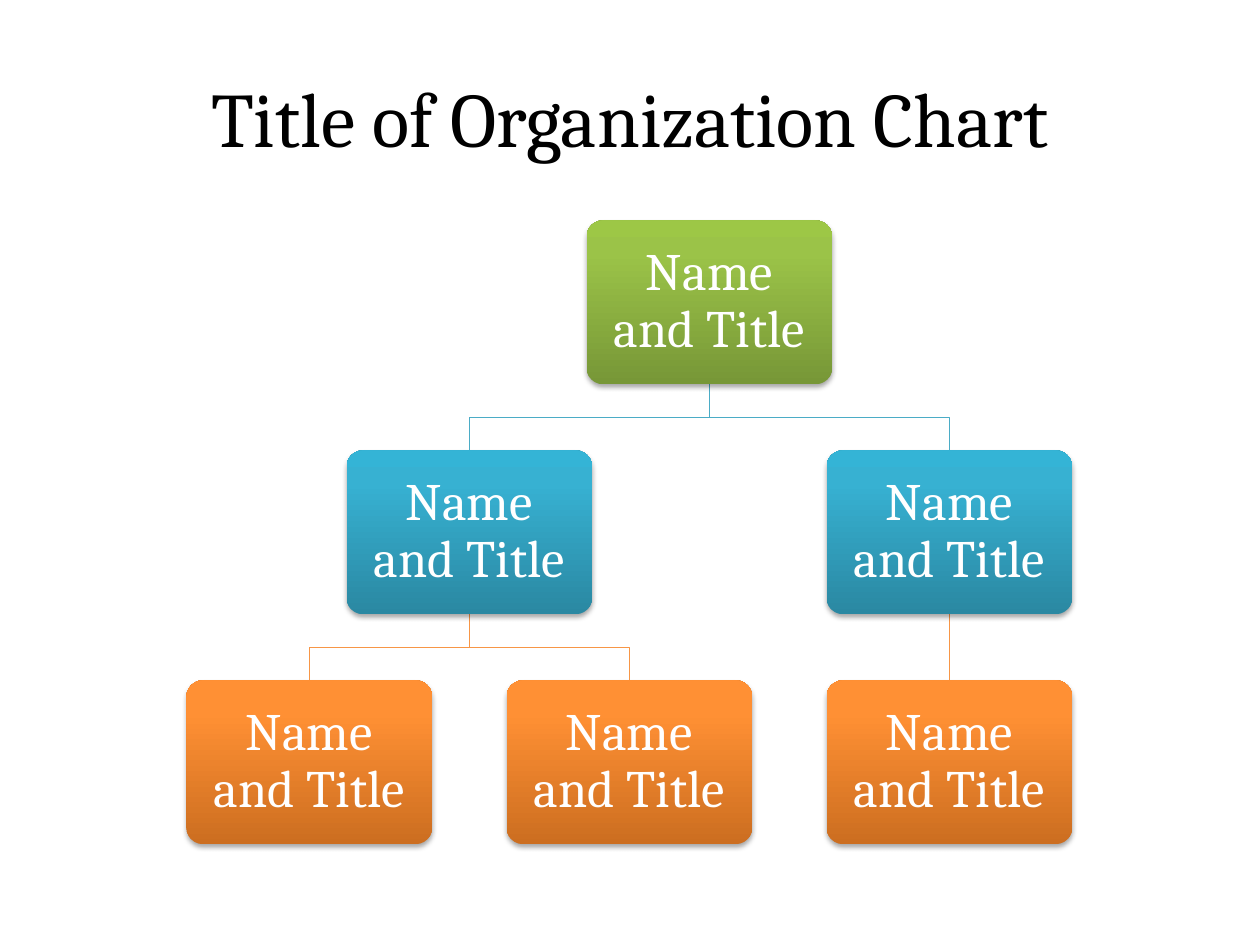
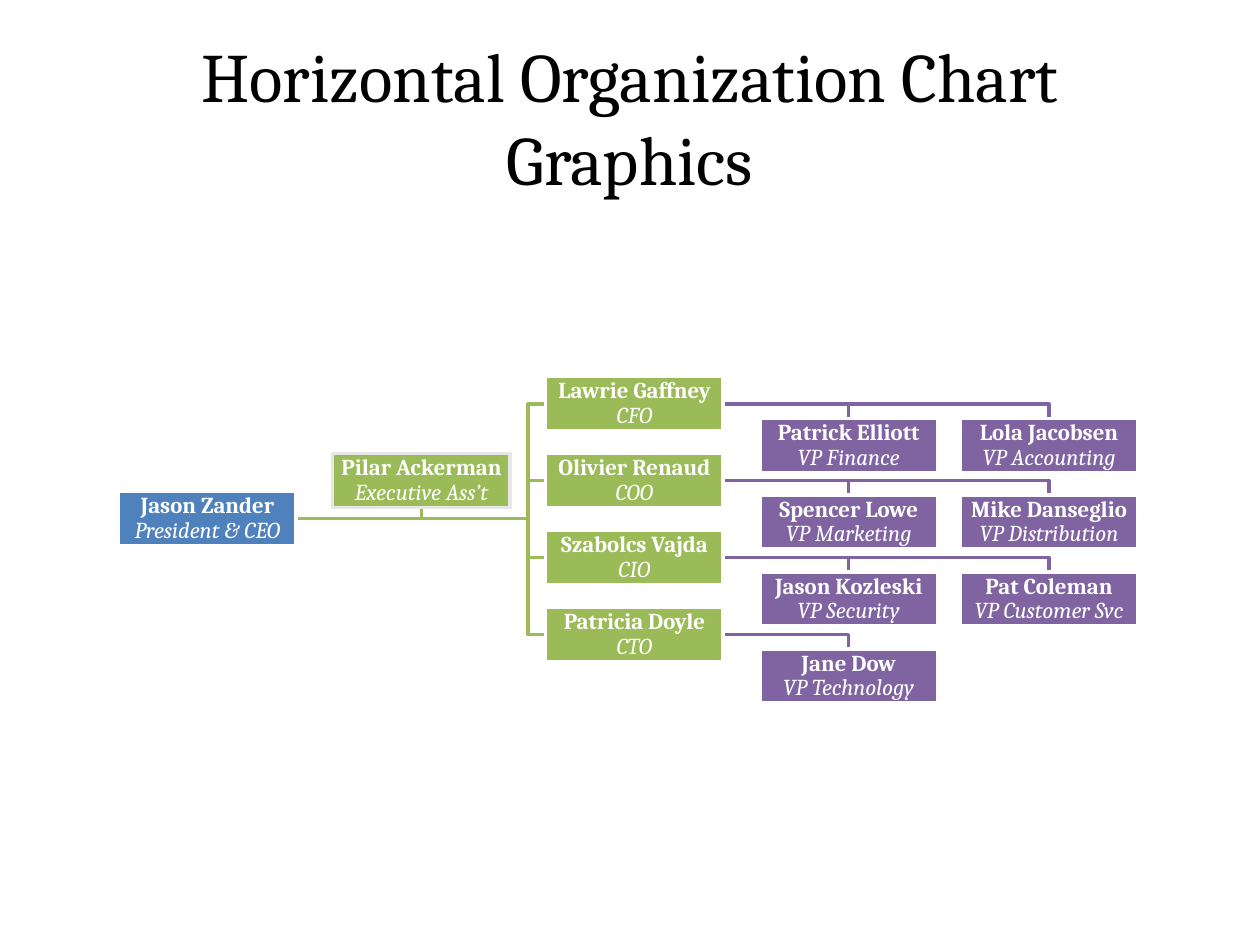
from lxml import etree
from pptx import Presentation
from pptx.dml.color import RGBColor
from pptx.enum.shapes import MSO_CONNECTOR, MSO_SHAPE
from pptx.enum.text import MSO_ANCHOR, PP_ALIGN
from pptx.oxml.ns import qn
from pptx.util import Inches, Pt

FONT = "Cambria"
COLOURS = {
    "black": "000000", "white": "FFFFFF", "frame": "E7E7E7",
    "blue": "4F81BD", "green": "9BBB59", "purple": "8064A2",
    "teal": "4BACC6", "orange": "F79646",
}
LEVELS = [
    {"gradient": [(0, "779737"), (80, "9BC348"), (100, "9DC746")], "link": None},
    {"gradient": [(0, "2A88A2"), (80, "37B1D2"), (100, "34B4D6")], "link": "teal"},
    {"gradient": [(0, "CC6E20"), (80, "FF9034"), (100, "FF9136")], "link": "orange"},
]

TREE_TITLE = "Title of Organization Chart"
ROLE = "Name and Title"
TREE = (ROLE, [
    (ROLE, [(ROLE, []), (ROLE, [])]),
    (ROLE, [(ROLE, [])]),
])

STAFF_TITLE = "Horizontal Organization Chart Graphics"
PRESIDENT = ("Jason Zander", "President & CEO")
ASSISTANT = ("Pilar Ackerman", "Executive Ass’t")
CHIEFS = [
    (("Lawrie Gaffney", "CFO"),
     [("Patrick Elliott", "VP Finance"), ("Lola Jacobsen", "VP Accounting")]),
    (("Olivier Renaud", "COO"),
     [("Spencer Lowe", "VP Marketing"), ("Mike Danseglio", "VP Distribution")]),
    (("Szabolcs Vajda", "CIO"),
     [("Jason Kozleski", "VP Security"), ("Pat Coleman", "VP Customer Svc")]),
    (("Patricia Doyle", "CTO"),
     [("Jane Dow", "VP Technology")]),
]

CARD_W, CARD_H = 1.95, 1.3
TREE_LEFT, TREE_TOP = 1.48, 1.75
TREE_COLUMN, TREE_ROW = 2.54, (5.4 - 1.75) / 2

STAFF_W, STAFF_H = 1.41, 0.43
PRESIDENT_AT = (0.94, 3.9)
ASSISTANT_AT = (2.64, 3.6)
CHIEF_LEFT, CHIEF_TOP, CHIEF_ROW = 4.33, 2.99, 0.61
VP_LEFT, VP_COLUMN, VP_DROP = 6.03, 1.59, 0.33
TRUNK_X = 4.19


def rgb(name):
    return RGBColor.from_string(COLOURS[name])


def write(box, lines, size, colour="white", spacing=0.9, inset=0.01, styles=()):
    frame = box.text_frame
    frame.word_wrap = True
    frame.vertical_anchor = MSO_ANCHOR.MIDDLE
    frame.margin_left = frame.margin_right = Inches(inset)
    frame.margin_top = frame.margin_bottom = Inches(inset)
    paragraph = frame.paragraphs[0]
    paragraph.alignment = PP_ALIGN.CENTER
    paragraph.line_spacing = spacing
    for number, line in enumerate(lines):
        if number:
            paragraph.add_line_break()
        run = paragraph.add_run()
        run.text = line
        run.font.name, run.font.size = FONT, Pt(size)
        run.font.color.rgb = rgb(colour)
        style = styles[number] if styles else None
        run.font.bold = style == "bold"
        run.font.italic = style == "italic"


def add_title(slide, text, size):
    box = slide.shapes.add_textbox(Inches(0.5), Inches(0.3), Inches(9), Inches(1.25))
    write(box, [text], size, colour="black", spacing=1.0, inset=0.1)


def add_link(slide, points, colour, width):
    points = [(Inches(x), Inches(y)) for x, y in points]
    if len({x for x, _ in points}) == 1:
        link = slide.shapes.add_connector(
            MSO_CONNECTOR.STRAIGHT, *points[0], *points[-1])
        etree.SubElement(link._element.spPr, qn("a:effectLst"))
    else:
        builder = slide.shapes.build_freeform(*points[0], scale=1.0)
        builder.add_line_segments(points[1:], close=False)
        link = builder.convert_to_shape()
        link.fill.background()
        link.shadow.inherit = False
    link.line.color.rgb = rgb(colour)
    link.line.width = Pt(width)


def add_box(slide, kind, x, y, width, height):
    box = slide.shapes.add_shape(
        kind, Inches(x), Inches(y), Inches(width), Inches(height))
    box.shadow.inherit = False
    return box


def add_stop_colour(parent, colour, alpha=None):
    node = etree.SubElement(parent, qn("a:srgbClr"), val=colour)
    if alpha:
        etree.SubElement(node, qn("a:alpha"), val=str(alpha * 1000))


def add_card(slide, label, x, y, gradient):
    card = add_box(slide, MSO_SHAPE.ROUNDED_RECTANGLE, x, y, CARD_W, CARD_H)
    card.adjustments[0] = 0.1
    card.line.fill.background()
    card.fill.gradient()
    card.fill.gradient_angle = 90
    properties = card._element.spPr
    stops = properties.find(qn("a:gradFill")).find(qn("a:gsLst"))
    for stop in list(stops):
        stops.remove(stop)
    for position, colour in gradient:
        stop = etree.SubElement(stops, qn("a:gs"), pos=str(position * 1000))
        add_stop_colour(stop, colour)
    shadow = etree.SubElement(
        properties.find(qn("a:effectLst")), qn("a:outerShdw"),
        blurRad=str(Pt(3.1)), dist=str(Pt(1.8)), dir="5400000", rotWithShape="0")
    add_stop_colour(shadow, COLOURS["black"], alpha=35)
    write(card, [label], 30, inset=0.16)


def add_branch(slide, node, depth, columns):
    label, reports = node
    y = TREE_TOP + depth * TREE_ROW
    if reports:
        lefts = [add_branch(slide, report, depth + 1, columns) for report in reports]
        x = sum(lefts) / len(lefts)
    else:
        lefts = []
        x = TREE_LEFT + TREE_COLUMN * next(columns)
    bottom, below = y + CARD_H, y + TREE_ROW
    middle, centre = (bottom + below) / 2, x + CARD_W / 2
    for left in lefts:
        end = left + CARD_W / 2
        add_link(slide, [(centre, bottom), (centre, middle), (end, middle), (end, below)],
                 LEVELS[depth + 1]["link"], 0.75)
    add_card(slide, label, x, y, LEVELS[depth]["gradient"])
    return x


def add_person(slide, person, x, y, fill, outline="white"):
    box = add_box(slide, MSO_SHAPE.RECTANGLE, x, y, STAFF_W, STAFF_H)
    box.fill.solid()
    box.fill.fore_color.rgb = rgb(fill)
    box.line.color.rgb = rgb(outline)
    box.line.width = Pt(2)
    write(box, person, 13, styles=("bold", "italic"))


def add_staff(slide):
    start = (PRESIDENT_AT[0] + STAFF_W, PRESIDENT_AT[1] + STAFF_H / 2)
    assistant_x = ASSISTANT_AT[0] + STAFF_W / 2
    links = [([start, (assistant_x, start[1]),
               (assistant_x, ASSISTANT_AT[1] + STAFF_H)], "green")]
    people = [(PRESIDENT, *PRESIDENT_AT, "blue")]
    for row, (chief, deputies) in enumerate(CHIEFS):
        y = CHIEF_TOP + row * CHIEF_ROW
        centre = y + STAFF_H / 2
        links.append(([start, (TRUNK_X, start[1]), (TRUNK_X, centre),
                       (CHIEF_LEFT, centre)], "green"))
        people.append((chief, CHIEF_LEFT, y, "green"))
        for column, deputy in enumerate(deputies):
            x = VP_LEFT + column * VP_COLUMN
            drop = x + STAFF_W / 2
            links.append(([(CHIEF_LEFT + STAFF_W, centre), (drop, centre),
                           (drop, y + VP_DROP)], "purple"))
            people.append((deputy, x, y + VP_DROP, "purple"))
    people.append((ASSISTANT, *ASSISTANT_AT, "green", "frame"))
    for points, colour in links:
        add_link(slide, points, colour, 2)
    for person in people:
        add_person(slide, *person)


def main():
    deck = Presentation()
    deck.slide_width, deck.slide_height = Inches(10), Inches(7.5)
    blank = deck.slide_layouts[6]

    tree_slide = deck.slides.add_slide(blank)
    add_title(tree_slide, TREE_TITLE, 44)
    add_branch(tree_slide, TREE, 0, iter(range(3)))

    staff_slide = deck.slides.add_slide(blank)
    add_title(staff_slide, STAFF_TITLE, 39.6)
    add_staff(staff_slide)

    deck.save("out.pptx")


if __name__ == "__main__":
    main()
